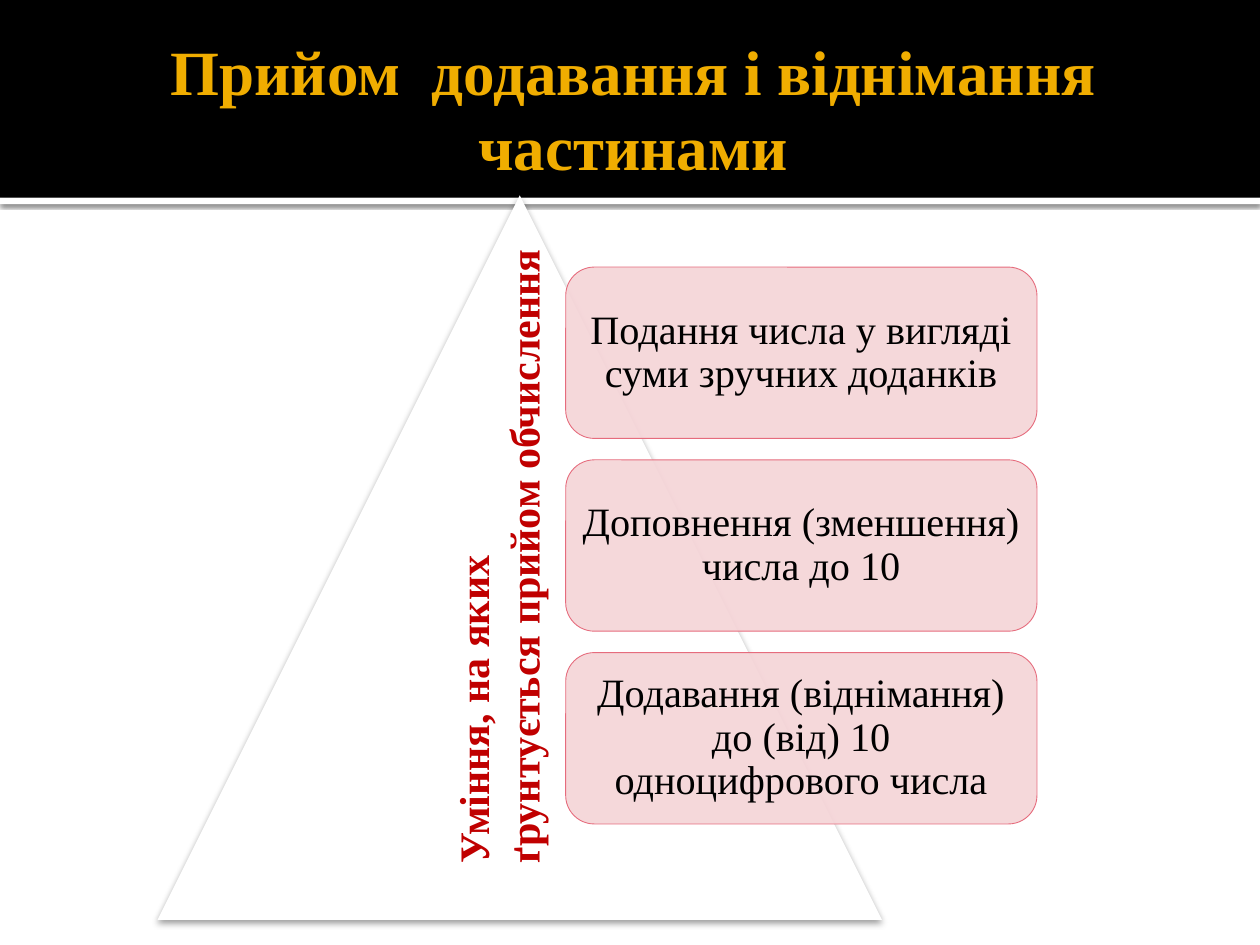
from dataclasses import dataclass

from lxml.etree import SubElement
from pptx import Presentation
from pptx.dml.color import RGBColor
from pptx.enum.shapes import MSO_SHAPE
from pptx.enum.text import MSO_ANCHOR, PP_ALIGN
from pptx.oxml.ns import qn
from pptx.util import Inches, Pt

FONT = "Times New Roman"
SKILLS = (
    "Подання числа у вигляді суми зручних доданків",
    "Доповнення (зменшення) числа до 10",
    "Додавання (віднімання) до (від) 10 одноцифрового числа",
)
CARD_TOP, CARD_STEP = 2.12, 1.53


@dataclass
class Box:
    left: float
    top: float
    width: float
    height: float

    def lengths(self) -> tuple:
        return tuple(map(Inches, (self.left, self.top, self.width, self.height)))


@dataclass
class Shadow:
    opacity: int
    blur: float
    distance: float


def color(value: str) -> RGBColor:
    return RGBColor.from_string(value)


def add_filled(page, kind, box: Box, fill: str):
    shape = page.shapes.add_shape(kind, *box.lengths())
    shape.shadow.inherit = False
    shape.fill.solid()
    shape.fill.fore_color.rgb = color(fill)
    shape.line.fill.background()
    return shape


def cast_shadow(shape, shadow: Shadow) -> None:
    """Give the shape a black shadow straight below it."""
    effects = shape._element.spPr.find(qn("a:effectLst"))
    outer = SubElement(effects, qn("a:outerShdw"), blurRad=str(Pt(shadow.blur)),
                       dist=str(Pt(shadow.distance)), dir="5400000",
                       algn="t", rotWithShape="0")
    black = SubElement(outer, qn("a:srgbClr"), val="000000")
    SubElement(black, qn("a:alpha"), val=str(shadow.opacity * 1000))


def style_paragraph(para, size: int, ink: str, bold: bool = False) -> None:
    para.font.name = FONT
    para.font.size = Pt(size)
    para.font.bold = bold
    para.font.color.rgb = color(ink)


def set_margins(frame, left: float, top: float, right: float, bottom: float) -> None:
    frame.margin_left, frame.margin_top = Inches(left), Inches(top)
    frame.margin_right, frame.margin_bottom = Inches(right), Inches(bottom)


def add_header(page) -> None:
    strip = add_filled(page, MSO_SHAPE.RECTANGLE, Box(0, 1.57, 10, 0.05), "FFFFFF")
    cast_shadow(strip, Shadow(60, 2.5, 0.8))
    band = add_filled(page, MSO_SHAPE.RECTANGLE, Box(0, 0, 10, 1.57), "000000")
    for shape in (band, strip):  # behind the title
        page.shapes._spTree.insert(2, shape._element)

    title = page.shapes.title
    title.left, title.top, title.width, title.height = Box(0.5, 0.17, 9, 1.37).lengths()
    frame = title.text_frame
    frame.text = "Прийом  додавання і віднімання частинами"
    frame.word_wrap = True
    frame.vertical_anchor = MSO_ANCHOR.MIDDLE
    set_margins(frame, 0.1, 0.05, 0.05, 0.05)
    para = frame.paragraphs[0]
    para.alignment = PP_ALIGN.CENTER
    style_paragraph(para, 36, "F0AD00", bold=True)


def add_card(page, box: Box, text: str) -> None:
    card = add_filled(page, MSO_SHAPE.ROUNDED_RECTANGLE, box, "F5D4D7")
    tint = card._element.spPr.find(qn("a:solidFill"))[0]
    SubElement(tint, qn("a:alpha"), val="90000")
    card.line.color.rgb = color("E66C7D")
    card.line.width = Pt(0.5)
    frame = card.text_frame
    frame.text = text
    frame.word_wrap = True
    frame.vertical_anchor = MSO_ANCHOR.MIDDLE
    set_margins(frame, 0.03, 0.03, 0.03, 0.03)
    para = frame.paragraphs[0]
    para.alignment = PP_ALIGN.CENTER
    para.line_spacing = 0.9
    style_paragraph(para, 23, "000000")


def add_vertical_label(page, box: Box, text: str) -> None:
    frame = page.shapes.add_textbox(*box.lengths()).text_frame
    frame.text = text
    frame.word_wrap = True
    frame._txBody.bodyPr.set("vert", "vert270")
    for para in frame.paragraphs:
        style_paragraph(para, 24, "C00000", bold=True)


def main() -> None:
    deck = Presentation()
    deck.slide_width, deck.slide_height = Inches(10), Inches(7.5)
    page = deck.slides.add_slide(deck.slide_layouts[5])
    add_header(page)
    triangle = add_filled(page, MSO_SHAPE.ISOSCELES_TRIANGLE,
                          Box(1.25, 1.55, 5.75, 5.75), "FFFFFF")
    cast_shadow(triangle, Shadow(38, 3.5, 2))
    for index, skill in enumerate(SKILLS):
        add_card(page, Box(4.49, CARD_TOP + index * CARD_STEP, 3.74, 1.36), skill)
    add_vertical_label(page, Box(3.5, 1.61, 1.01, 5.34),
                       "Уміння, на яких\nґрунтується прийом обчислення")
    deck.save("out.pptx")


if __name__ == "__main__":
    main()
